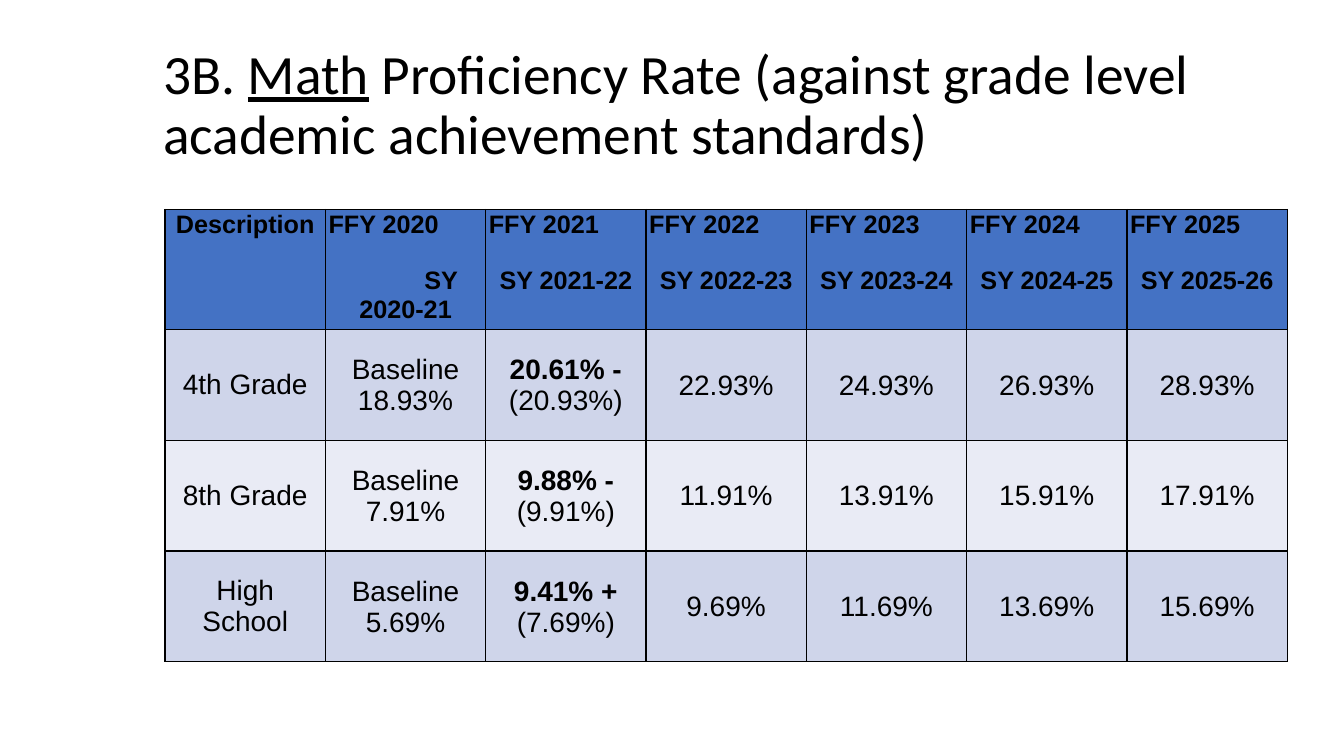
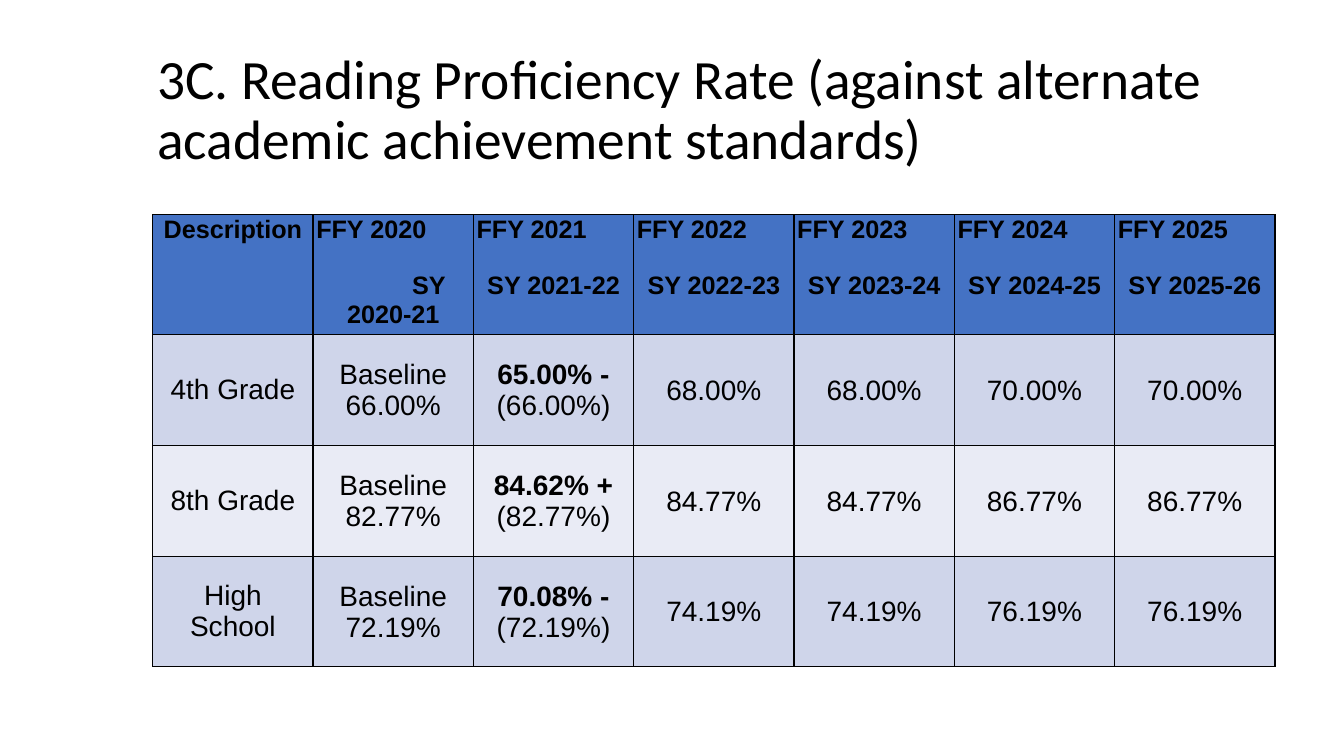
from lxml import etree
from pptx import Presentation
from pptx.dml.color import RGBColor
from pptx.enum.text import MSO_ANCHOR, PP_ALIGN
from pptx.oxml.ns import qn
from pptx.util import Cm, Pt

LEFT, CENTER = PP_ALIGN.LEFT, PP_ALIGN.CENTER
TOP, MIDDLE = MSO_ANCHOR.TOP, MSO_ANCHOR.MIDDLE

BLACK = RGBColor(0x00, 0x00, 0x00)
HEADER_BLUE = RGBColor(0x44, 0x72, 0xC4)
BANDS = (RGBColor(0xCF, 0xD5, 0xEA), RGBColor(0xE9, 0xEB, 0xF5))
TITLE_FONT, TABLE_FONT = "Calibri", "Arial"

# Content: title spans are (text, underlined)
# Rows are grade, baseline, (result, target), later targets
YEARS = range(2020, 2026)
SLIDES = [
    {
        "title": [("3B. ", False), ("Math", True),
                  (" Proficiency Rate (against grade level academic achievement standards)", False)],
        "title_at": (3.86, 1.6),
        "table_at": (4.16, 5.28),
        "rows": [
            ("4th Grade", "18.93%", ("20.61% -", "20.93%"), "22.93%", "24.93%", "26.93%", "28.93%"),
            ("8th Grade", "7.91%", ("9.88% -", "9.91%"), "11.91%", "13.91%", "15.91%", "17.91%"),
            ("High School", "5.69%", ("9.41% +", "7.69%"), "9.69%", "11.69%", "13.69%", "15.69%"),
        ],
    },
    {
        "title": [("3C. Reading Proficiency Rate (against alternate academic achievement standards)", False)],
        "title_at": (3.71, 1.73),
        "table_at": (3.85, 5.41),
        "rows": [
            ("4th Grade", "66.00%", ("65.00% -", "66.00%"), "68.00%", "68.00%", "70.00%", "70.00%"),
            ("8th Grade", "82.77%", ("84.62% +", "82.77%"), "84.77%", "84.77%", "86.77%", "86.77%"),
            ("High School", "72.19%", ("70.08% -", "72.19%"), "74.19%", "74.19%", "76.19%", "76.19%"),
        ],
    },
]

# Shared sizes
TITLE_WIDTH, TITLE_HEIGHT = Cm(29.21), Cm(3.68)
COLUMN_WIDTH, ROW_HEIGHT = Cm(4.04), Cm(2.79)
TIGHT = Cm(0.03)


def add_span(para, text, size, font, bold=False, underline=False):
    span = para.add_run()
    span.text = text
    span.font.size = Pt(size)
    span.font.name = font
    span.font.bold = bold
    span.font.underline = underline
    span.font.color.rgb = BLACK


def add_title(page, spans, at):
    box = page.shapes.add_textbox(Cm(at[0]), Cm(at[1]), TITLE_WIDTH, TITLE_HEIGHT)
    frame = box.text_frame
    frame.word_wrap = True
    frame.vertical_anchor = MIDDLE
    frame.margin_bottom = Cm(1.65)
    para = frame.paragraphs[0]
    para.line_spacing = 0.9
    for text, underline in spans:
        add_span(para, text, 39.6, TITLE_FONT, underline=underline)


def style_cell(cell, fill, anchor, tight):
    properties = cell._tc.get_or_add_tcPr()
    for side in ("a:lnL", "a:lnR", "a:lnT", "a:lnB"):
        line = etree.SubElement(properties, qn(side), w=str(Pt(1)))
        solid = etree.SubElement(line, qn("a:solidFill"))
        etree.SubElement(solid, qn("a:srgbClr"), val=str(BLACK))
    cell.fill.solid()
    cell.fill.fore_color.rgb = fill
    cell.vertical_anchor = anchor
    if tight:
        cell.margin_left = cell.margin_right = cell.margin_top = TIGHT
        cell.margin_bottom = 0


def fill_cell(cell, lines, size):
    """Write each (text, bold, alignment) as a paragraph and return them."""
    frame = cell.text_frame
    paras = []
    for text, bold, alignment in lines:
        para = frame.add_paragraph() if paras else frame.paragraphs[0]
        para.alignment = alignment
        add_span(para, text, size, TABLE_FONT, bold)
        paras.append(para)
    return paras


def add_header(table):
    cells = list(table.rows[0].cells)
    for cell in cells:
        style_cell(cell, HEADER_BLUE, TOP, True)
    fill_cell(cells[0], [("Description", True, CENTER)], 18)
    for cell, year in zip(cells[1:], YEARS):
        federal, school = fill_cell(cell, [
            (f"FFY {year}", True, LEFT),
            (f"SY {year}-{(year + 1) % 100}", True, CENTER),
        ], 18)
        federal._p.get_or_add_pPr().set("marL", str(Cm(0.05)))
        school.space_before = Pt(20)
        if year == YEARS[0]:  # the first school year breaks after "SY"
            school._p.get_or_add_pPr().set("indent", str(Cm(1.78)))


def body_lines(value, column):
    if column == 1:
        return [(f"Baseline {value}", False, CENTER)]
    if column == 2:
        result, target = value
        return [(result, True, CENTER), (f"({target})", False, CENTER)]
    return [(value, False, CENTER)]


def add_rates_table(page, rows, at):
    row_count, column_count = len(rows) + 1, len(YEARS) + 1
    table = page.shapes.add_table(
        row_count, column_count, Cm(at[0]), Cm(at[1]),
        COLUMN_WIDTH * column_count, ROW_HEIGHT * row_count).table
    for column in table.columns:
        column.width = COLUMN_WIDTH
    for row in table.rows:
        row.height = ROW_HEIGHT
    add_header(table)
    for index, values in enumerate(rows):
        for column, value in enumerate(values):
            cell = table.cell(index + 1, column)
            style_cell(cell, BANDS[index % 2], MIDDLE, column > 0)
            fill_cell(cell, body_lines(value, column), 20)


def main():
    deck = Presentation()
    deck.slide_width, deck.slide_height = Cm(33.87), Cm(19.05)
    blank = deck.slide_layouts[6]
    for content in SLIDES:
        page = deck.slides.add_slide(blank)
        add_title(page, content["title"], content["title_at"])
        add_rates_table(page, content["rows"], content["table_at"])
    deck.save("out.pptx")


if __name__ == "__main__":
    main()
